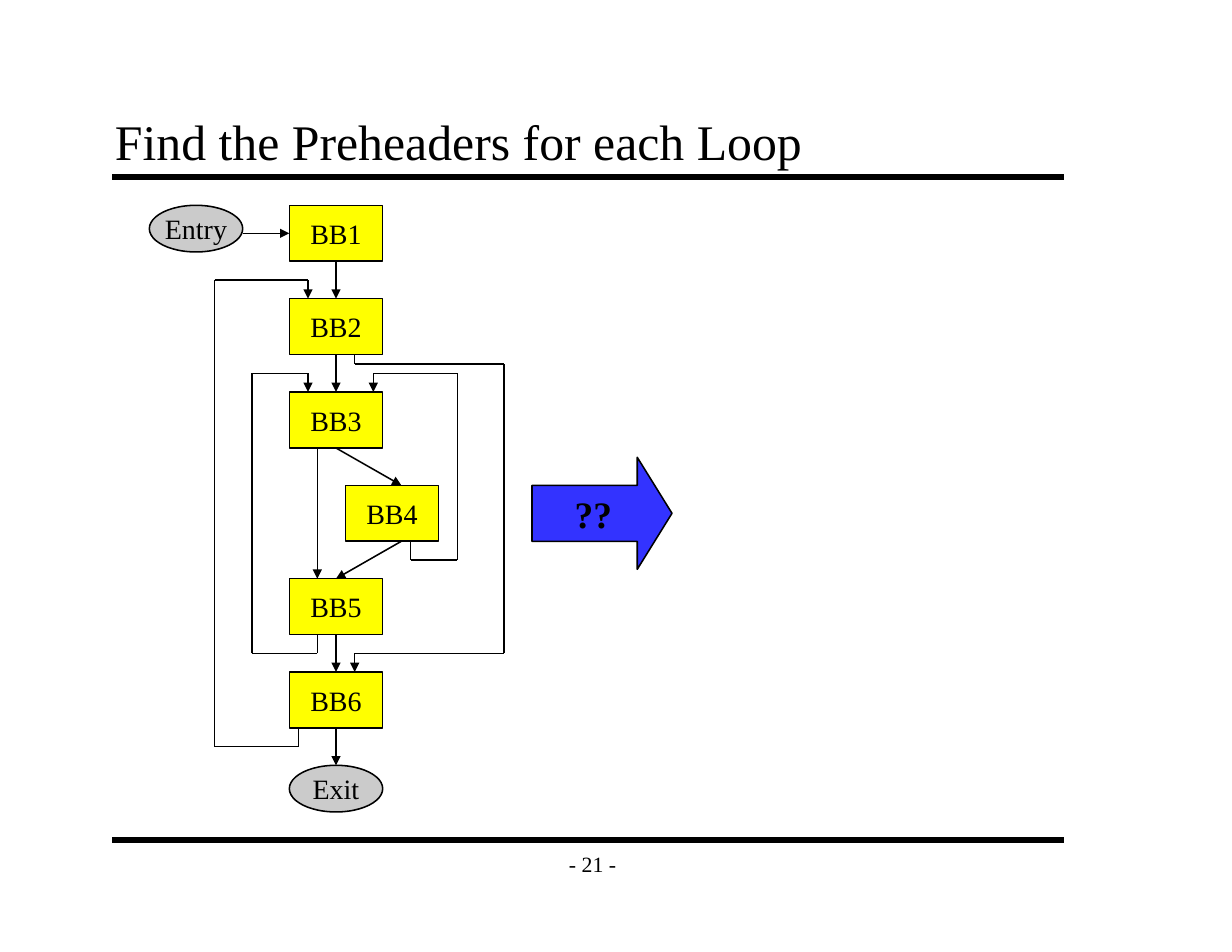
from dataclasses import dataclass
from itertools import pairwise

from lxml import etree
from pptx import Presentation
from pptx.dml.color import RGBColor
from pptx.enum import shapes, text
from pptx.oxml import ns
from pptx.util import Inches, Length, Pt

Point = tuple[int, int]


@dataclass(frozen=True)
class Theme:
    font: str = "Times New Roman"
    ink: RGBColor = RGBColor(0, 0, 0)
    block: RGBColor = RGBColor(0xFF, 0xFF, 0)
    terminal: RGBColor = RGBColor(0xCB, 0xCB, 0xCB)
    arrow: RGBColor = RGBColor(0x33, 0x33, 0xFF)
    title_size: int = 32
    question_size: int = 24
    node_size: int = 18
    footer_size: int = 14
    line: float = 1
    rule: float = 4


@dataclass(frozen=True)
class Node:
    """A labelled shape, placed in grid units."""
    label: str
    left: int
    top: int
    width: int
    height: int
    kind: shapes.MSO_SHAPE
    fill: RGBColor
    size: int = Theme.node_size
    bold: bool = False


THEME = Theme()


def grid(units: float) -> Length:
    """The whole layout sits on a grid of twelfths of an inch."""
    return Inches(units / 12)


def block(number: int, left: int = 31) -> Node:
    return Node(f"BB{number}", left, 12 + 10 * number, 10, 6,
                shapes.MSO_SHAPE.RECTANGLE, THEME.block)


def terminal(label: str, left: int, top: int) -> Node:
    return Node(label, left, top, 10, 5, shapes.MSO_SHAPE.OVAL, THEME.terminal)


NODES = [
    block(1), block(2), block(3), block(4, left=37), block(5), block(6),
    terminal("Entry", 16, 22),
    terminal("Exit", 31, 82),
    Node("??", 57, 49, 15, 12, shapes.MSO_SHAPE.RIGHT_ARROW, THEME.arrow,
         THEME.question_size, True),
]

EDGES: list[list[Point]] = [
    [(26, 25), (31, 25)],                                        # Entry to BB1
    [(36, 28), (36, 32)],                                        # BB1 to BB2
    [(36, 38), (36, 42)],                                        # BB2 to BB3
    [(36, 48), (43, 52)],                                        # BB3 to BB4
    [(34, 48), (34, 62)],                                        # BB3 to BB5
    [(43, 58), (36, 62)],                                        # BB4 to BB5
    [(36, 68), (36, 72)],                                        # BB5 to BB6
    [(36, 78), (36, 82)],                                        # BB6 to Exit
    [(38, 38), (38, 39), (54, 39), (54, 70), (38, 70), (38, 72)],  # BB2 to BB6
    [(44, 58), (44, 60), (49, 60), (49, 40), (40, 40), (40, 42)],  # BB4 to BB3
    [(34, 68), (34, 70), (27, 70), (27, 40), (33, 40), (33, 42)],  # BB5 to BB3
    [(32, 78), (32, 80), (23, 80), (23, 30), (33, 30), (33, 32)],  # BB6 to BB2
]


def write(frame, words: str, size: int, align: text.PP_ALIGN,
          anchor: text.MSO_ANCHOR, wrap: bool = False, bold: bool = False) -> None:
    frame.word_wrap = wrap
    frame.vertical_anchor = anchor
    para = frame.paragraphs[0]
    para.text = words
    para.alignment = align
    para.font.name = THEME.font
    para.font.size = Pt(size)
    para.font.bold = bold
    para.font.color.rgb = THEME.ink


def add_label(page, words: str, left: int, top: int, width: int, height: int,
              size: int, align: text.PP_ALIGN, anchor: text.MSO_ANCHOR,
              wrap: bool = False) -> None:
    box = page.shapes.add_textbox(grid(left), grid(top), grid(width), grid(height))
    frame = box.text_frame
    frame.margin_left = frame.margin_right = Inches(0.11)
    frame.margin_top = frame.margin_bottom = Inches(0.06)
    write(frame, words, size, align, anchor, wrap)


def add_node(page, node: Node) -> None:
    shape = page.shapes.add_shape(node.kind, grid(node.left), grid(node.top),
                                  grid(node.width), grid(node.height))
    shape.shadow.inherit = False
    shape.fill.solid()
    shape.fill.fore_color.rgb = node.fill
    shape.line.color.rgb = THEME.ink
    shape.line.width = Pt(THEME.line)
    if node.kind == shapes.MSO_SHAPE.RIGHT_ARROW:
        shape.adjustments[1] = 0.31
    write(shape.text_frame, node.label, node.size, text.PP_ALIGN.CENTER,
          text.MSO_ANCHOR.MIDDLE, bold=node.bold)


def add_line(page, start: Point, end: Point, width: float, head: bool = False) -> None:
    line = page.shapes.add_connector(shapes.MSO_CONNECTOR.STRAIGHT,
                                     *map(grid, start), *map(grid, end))
    line.line.color.rgb = THEME.ink
    line.line.width = Pt(width)
    if head:
        etree.SubElement(line.line._get_or_add_ln(), ns.qn("a:tailEnd"), type="triangle")
    etree.SubElement(line._element.spPr, ns.qn("a:effectLst"))


def add_edge(page, points: list[Point]) -> None:
    """Join the points with lines; only the last one has an arrowhead."""
    for start, end in pairwise(points):
        add_line(page, start, end, THEME.line, head=end == points[-1])


def main() -> None:
    deck = Presentation()
    deck.slide_width, deck.slide_height = Inches(11), Inches(8.5)
    page = deck.slides.add_slide(deck.slide_layouts[6])

    for height in (19, 90):
        add_line(page, (12, height), (114, height), THEME.rule)
    add_label(page, "- 21 -", 59, 90, 9, 5, THEME.footer_size,
              text.PP_ALIGN.CENTER, text.MSO_ANCHOR.MIDDLE)
    add_label(page, "Find the Preheaders for each Loop", 11, 11, 102, 8,
              THEME.title_size, text.PP_ALIGN.LEFT, text.MSO_ANCHOR.BOTTOM, wrap=True)
    for node in NODES:
        add_node(page, node)
    for points in EDGES:
        add_edge(page, points)

    deck.save("out.pptx")


if __name__ == "__main__":
    main()
